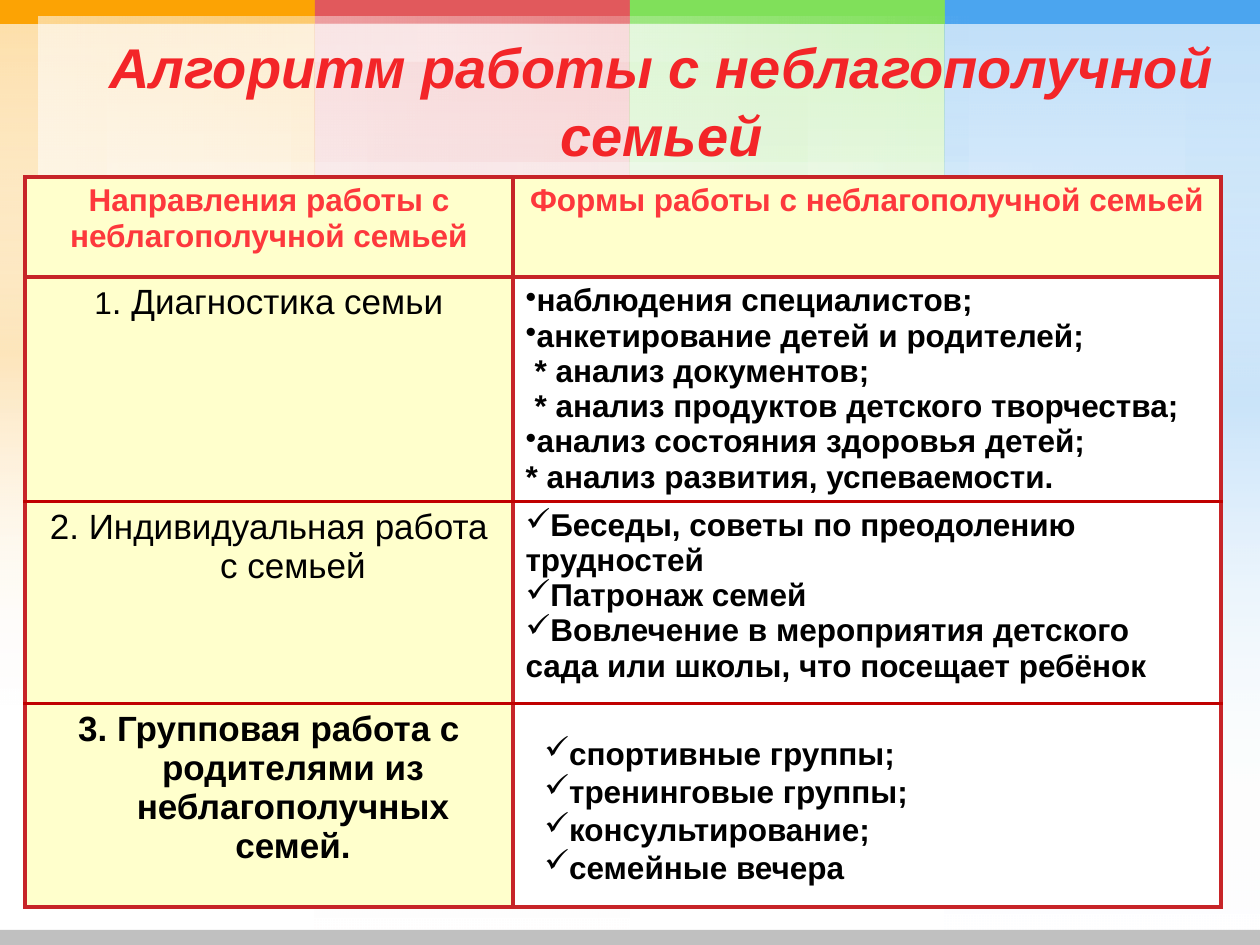
from lxml.etree import SubElement
from pptx import Presentation
from pptx.dml.color import RGBColor
from pptx.enum.shapes import MSO_SHAPE
from pptx.enum.text import MSO_ANCHOR, MSO_AUTO_SIZE, PP_ALIGN
from pptx.oxml import parse_xml
from pptx.oxml.ns import nsdecls, qn
from pptx.util import Pt

PX = 914400 / 126
INK = {
    "orange": "FCA304", "red": "E1595C", "green": "80E05A", "blue": "4BA5EF",
    "white": "FFFFFF", "grey": "C0C0C0", "cream": "FFFFCC", "black": "000000",
    "title": "F32528", "head": "FD383C", "edge": "C72428", "rule": "C00000",
}

# Content
TITLE = "Алгоритм работы с неблагополучной семьей"
HEADS = ["Направления работы с неблагополучной семьей",
         "Формы работы с неблагополучной семьей"]
# Left column: runs of (text, size), bold, hanging indent
STEPS = [
    ([("1", 18), (". Диагностика семьи", 20)], False, 0),
    ([("2. Индивидуальная работа с семьей", 20)], False, 48),
    ([("3. Групповая работа с родителями из неблагополучных семей.", 20)], True, 48),
]
# Right column: (bullet, text, indent)
FORMS = [
    [("•", "наблюдения специалистов;", 0),
     ("•", "анкетирование детей и родителей;", 0),
     ("", "* анализ документов;", 9),
     ("", "* анализ продуктов детского творчества;", 9),
     ("•", "анализ состояния здоровья детей;", 0),
     ("", "* анализ развития, успеваемости.", 0)],
    [("✓", "Беседы, советы по преодолению трудностей", 0),
     ("✓", "Патронаж семей", 0),
     ("✓", "Вовлечение в мероприятия детского сада или школы, что посещает ребёнок", 0)],
]
GROUPS = ["спортивные группы;", "тренинговые группы;",
          "консультирование;", "семейные вечера"]
COLS = [488, 708]
ROWS = [100, 224, 202, 204]

# Backdrop: (colour, left, width, height, is a glow), each fading downwards
BANDS = ["orange", "red", "green", "blue"]
FADES = [
    ("red", 315, 315, 945, False), ("red", 368, 231, 945, True),
    ("red", 315, 315, 945, False),
    ("green", 630, 315, 708, False), ("green", 630, 178, 708, True),
    ("green", 630, 315, 708, False),
    ("blue", 945, 24, 803, True), ("blue", 945, 315, 941, False),
    ("blue", 1186, 74, 803, True), ("blue", 945, 315, 941, False),
    ("orange", 0, 315, 708, False), ("orange", 292, 23, 708, True),
    ("orange", 0, 106, 708, True), ("orange", 0, 315, 708, False),
]
# White sheen behind the title: (top, width, height, is a glow)
SHEEN = [(163, 1061, 13, True), (17, 946, 158, False),
         (24, 808, 37, True), (17, 946, 158, False)]


def px(n):
    return round(n * PX)


def rgb(name):
    return RGBColor.from_string(INK[name])


def write(frame, text, first=False, size=18, color="black", bold=True,
          italic=False, align=PP_ALIGN.LEFT, bullet="", left=0, hang=0):
    """Add one paragraph; text is a string or a list of (text, size) runs."""
    par = frame.paragraphs[0] if first else frame.add_paragraph()
    props = par._p.get_or_add_pPr()
    props.set("marL", str(px(left)))
    props.set("indent", str(px(-hang)))
    if bullet:
        SubElement(props, qn("a:buChar")).set("char", bullet)
    else:
        SubElement(props, qn("a:buNone"))
    par.alignment = align
    for words, pts in [(text, size)] if isinstance(text, str) else text:
        run = par.add_run()
        run.text = words
        font = run.font
        font.name, font.size = "Arial", Pt(pts)
        font.bold, font.italic = bold, italic
        font.color.rgb = rgb(color)


def rect(slide, x, y, w, h, color):
    box = slide.shapes.add_shape(MSO_SHAPE.RECTANGLE, px(x), px(y), px(w), px(h))
    box.shadow.inherit = False
    box.line.fill.background()
    box.fill.solid()
    box.fill.fore_color.rgb = rgb(color)
    return box


def fade(box, color, alpha, glow, angle):
    """Swap the solid fill for a fade from one colour to clear white."""
    tint, clear = (INK[color], alpha), (INK["white"], 0)
    stops = [(0, clear), (50, tint), (100, clear)] if glow else [(0, tint), (100, clear)]
    marks = "".join(
        f'<a:gs pos="{pos * 1000}"><a:srgbClr val="{hue}">'
        f'<a:alpha val="{part * 1000}"/></a:srgbClr></a:gs>'
        for pos, (hue, part) in stops)
    props = box._element.spPr
    props.replace(props.find(qn("a:solidFill")), parse_xml(
        f'<a:gradFill {nsdecls("a")} rotWithShape="1"><a:gsLst>{marks}</a:gsLst>'
        f'<a:lin ang="{angle * 60000}" scaled="0"/></a:gradFill>'))


def style(cell, fill, top, base):
    cell.fill.solid()
    cell.fill.fore_color.rgb = rgb(fill)
    sides = [("L", "edge"), ("R", "edge"), ("T", top), ("B", base)]
    for spot, (side, color) in enumerate(sides):
        cell._tc.get_or_add_tcPr().insert(spot, parse_xml(
            f'<a:ln{side} {nsdecls("a")} w="{Pt(2.25)}"><a:solidFill>'
            f'<a:srgbClr val="{INK[color]}"/></a:solidFill></a:ln{side}>'))


def backdrop(slide):
    for color, x, w, h, glow in FADES:
        fade(rect(slide, x, 0, w, h, color), color, 20, glow, 90)
    for i, color in enumerate(BANDS):
        rect(slide, 315 * i, 0, 315, 24, color)
    for y, w, h, glow in SHEEN:
        fade(rect(slide, 39, y, w, h, "white"), "white", 35, glow, 0)
    rect(slide, 0, 930, 1260, 15, "grey")


def heading(slide):
    title = slide.shapes.title
    slide.shapes._spTree.append(title._element)  # in front of the backdrop
    title.left, title.top, title.width, title.height = map(px, (63, 35, 1197, 130))
    frame = title.text_frame
    frame.auto_size = MSO_AUTO_SIZE.NONE
    frame.vertical_anchor = MSO_ANCHOR.MIDDLE
    write(frame, TITLE, first=True, size=32, color="title", italic=True,
          align=PP_ALIGN.CENTER)


def grid(slide):
    table = slide.shapes.add_table(len(ROWS), len(COLS), px(25), px(177),
                                   px(sum(COLS)), px(sum(ROWS))).table
    for col, w in zip(table.columns, COLS):
        col.width = px(w)
    for row, h in zip(table.rows, ROWS):
        row.height = px(h)
    last = len(ROWS) - 1
    for r in range(len(ROWS)):
        for c in range(len(COLS)):
            style(table.cell(r, c), "cream" if r == 0 or c == 0 else "white",
                  "edge" if r < 2 else "rule",
                  "edge" if r in (0, last) else "rule")
    for c, text in enumerate(HEADS):
        write(table.cell(0, c).text_frame, text, first=True, color="head",
              align=PP_ALIGN.CENTER)
    for r, (runs, bold, hang) in enumerate(STEPS, 1):
        write(table.cell(r, 0).text_frame, runs, first=True, bold=bold,
              align=PP_ALIGN.CENTER, left=hang, hang=hang)
    for r, lines in enumerate(FORMS, 1):
        for i, (mark, text, left) in enumerate(lines):
            write(table.cell(r, 1).text_frame, text, first=i == 0,
                  bullet=mark, left=left)


def groups(slide):
    box = slide.shapes.add_textbox(px(532), px(728), px(576), px(165))
    frame = box.text_frame
    frame.word_wrap = True
    for i, text in enumerate(GROUPS):
        write(frame, text, first=i == 0, bullet="✓")


def main():
    deck = Presentation()
    deck.slide_width, deck.slide_height = px(1260), px(945)
    slide = deck.slides.add_slide(deck.slide_layouts[5])
    backdrop(slide)
    heading(slide)
    grid(slide)
    groups(slide)
    deck.save("out.pptx")


if __name__ == "__main__":
    main()
